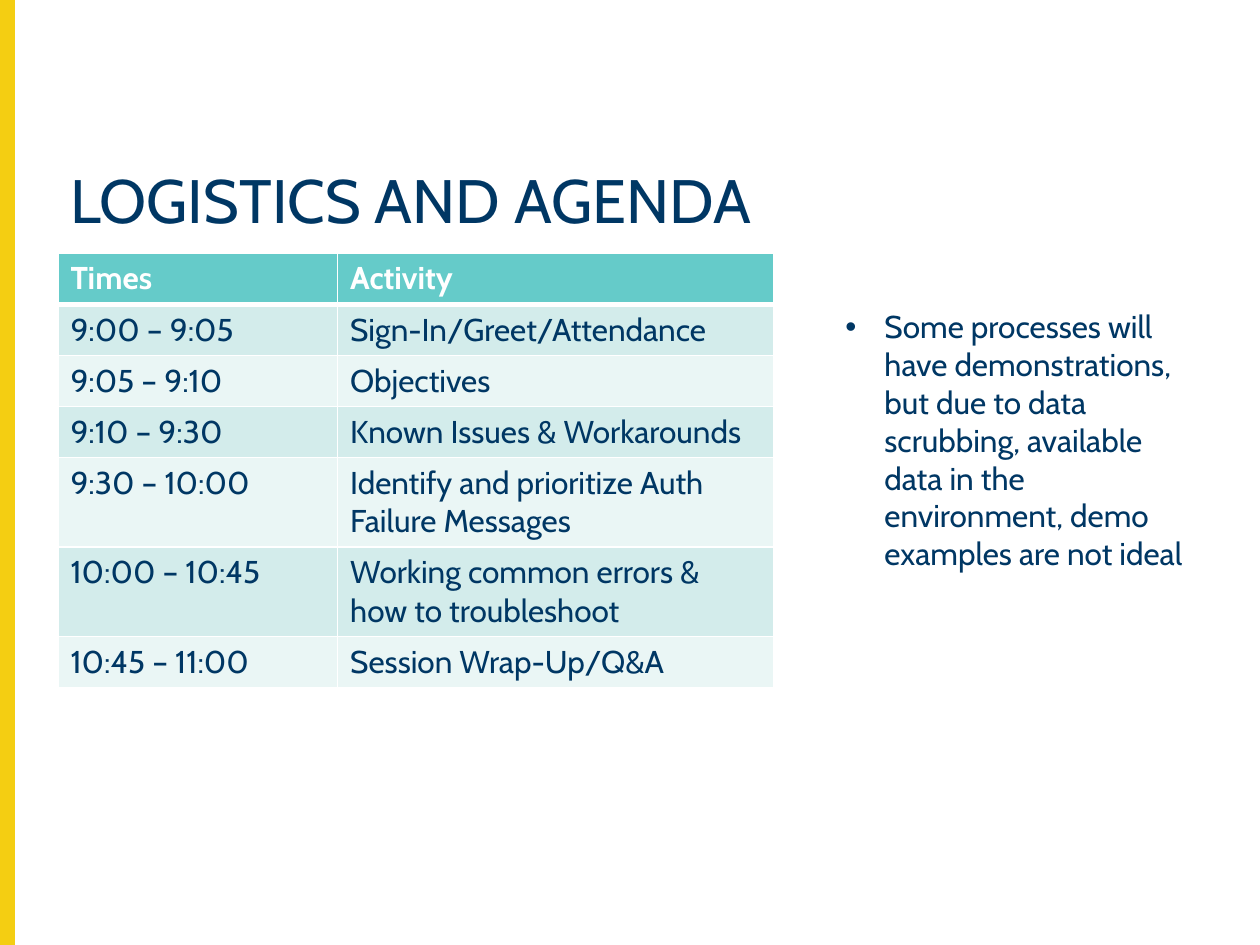
from lxml import etree
from pptx import Presentation
from pptx.dml.color import RGBColor
from pptx.enum import shapes, text
from pptx.oxml import ns
from pptx.util import Inches, Pt

FONT = "Cabin"
NAVY = RGBColor(0x00, 0x37, 0x64)
YELLOW = RGBColor(0xF4, 0xCE, 0x12)
TEAL = RGBColor(0x65, 0xCB, 0xC9)
BAND_DARK = RGBColor(0xD3, 0xEC, 0xEB)
BAND_LIGHT = RGBColor(0xEA, 0xF6, 0xF5)
WHITE = RGBColor(0xFF, 0xFF, 0xFF)

TITLE = "LOGISTICS AND AGENDA"
NOTE = ("Some processes will have demonstrations, but due to data scrubbing, "
        "available data in the environment, demo examples are not ideal")
AGENDA = [
    ("Times", "Activity"),
    ("9:00 – 9:05", "Sign-In/Greet/Attendance"),
    ("9:05 – 9:10", "Objectives"),
    ("9:10 – 9:30", "Known Issues & Workarounds"),
    ("9:30 – 10:00", "Identify and prioritize Auth Failure Messages"),
    ("10:00 – 10:45", "Working common errors & how to troubleshoot"),
    ("10:45 – 11:00", "Session Wrap-Up/Q&A"),
]
COLUMN_WIDTHS = (2.22, 3.46)
ROW_HEIGHT = 0.37


def add_run(paragraph, words, size=18, color=NAVY, bold=False):
    run = paragraph.add_run()
    run.text = words
    run.font.name = FONT
    run.font.size = Pt(size)
    run.font.bold = bold
    run.font.color.rgb = color


def place(holder, left, top, width, height):
    """Move a placeholder and return its first paragraph, set top left."""
    holder.left, holder.top = Inches(left), Inches(top)
    holder.width, holder.height = Inches(width), Inches(height)
    frame = holder.text_frame
    frame.word_wrap = True
    frame.auto_size = text.MSO_AUTO_SIZE.NONE
    frame.vertical_anchor = text.MSO_ANCHOR.TOP
    paragraph = frame.paragraphs[0]
    paragraph.alignment = text.PP_ALIGN.LEFT
    paragraph.space_before = Pt(0)
    return paragraph


def set_borders(cell, bottom):
    """Draw white cell borders, 1 pt except for the bottom one."""
    properties = cell._tc.get_or_add_tcPr()
    widths = {"a:lnL": 1, "a:lnR": 1, "a:lnT": 1, "a:lnB": bottom}
    for index, (tag, width) in enumerate(widths.items()):
        line = etree.Element(ns.qn(tag), w=str(Pt(width)))
        fill = etree.SubElement(line, ns.qn("a:solidFill"))
        etree.SubElement(fill, ns.qn("a:srgbClr"), val=str(WHITE))
        properties.insert(index, line)


def add_agenda(slide):
    table = slide.shapes.add_table(
        len(AGENDA), len(COLUMN_WIDTHS), Inches(0.46), Inches(2.01),
        Inches(sum(COLUMN_WIDTHS)), Inches(ROW_HEIGHT * len(AGENDA))).table
    for column, width in zip(table.columns, COLUMN_WIDTHS):
        column.width = Inches(width)
    for r, entries in enumerate(AGENDA):
        header = r == 0
        table.rows[r].height = Inches(ROW_HEIGHT)
        band = TEAL if header else BAND_DARK if r % 2 else BAND_LIGHT
        for c, words in enumerate(entries):
            cell = table.cell(r, c)
            cell.fill.solid()
            cell.fill.fore_color.rgb = band
            set_borders(cell, bottom=3 if header else 1)
            add_run(cell.text_frame.paragraphs[0], words,
                    color=WHITE if header else NAVY, bold=header)


def main():
    deck = Presentation()
    deck.slide_width, deck.slide_height = Inches(10), Inches(7.5)
    slide = deck.slides.add_slide(deck.slide_layouts[1])
    title, note = slide.placeholders

    stripe = slide.shapes.add_shape(
        shapes.MSO_SHAPE.RECTANGLE, 0, 0, Inches(0.11), deck.slide_height)
    stripe.shadow.inherit = False
    stripe.fill.solid()
    stripe.fill.fore_color.rgb = YELLOW
    stripe.line.color.rgb = YELLOW
    stripe.line.width = Pt(1)

    heading = place(title, 0.46, 1.3, 9.33, 0.79)
    heading.line_spacing = 0.9
    add_run(heading, TITLE, size=35)

    add_agenda(slide)

    bullet = place(note, 6.61, 2.39, 3.04, 2.22)
    properties = bullet._p.get_or_add_pPr()
    properties.set("marL", str(Inches(0.31)))
    properties.set("indent", str(-Inches(0.31)))
    etree.SubElement(properties, ns.qn("a:buChar"), char="•")
    add_run(bullet, NOTE)

    deck.save("out.pptx")


if __name__ == "__main__":
    main()
